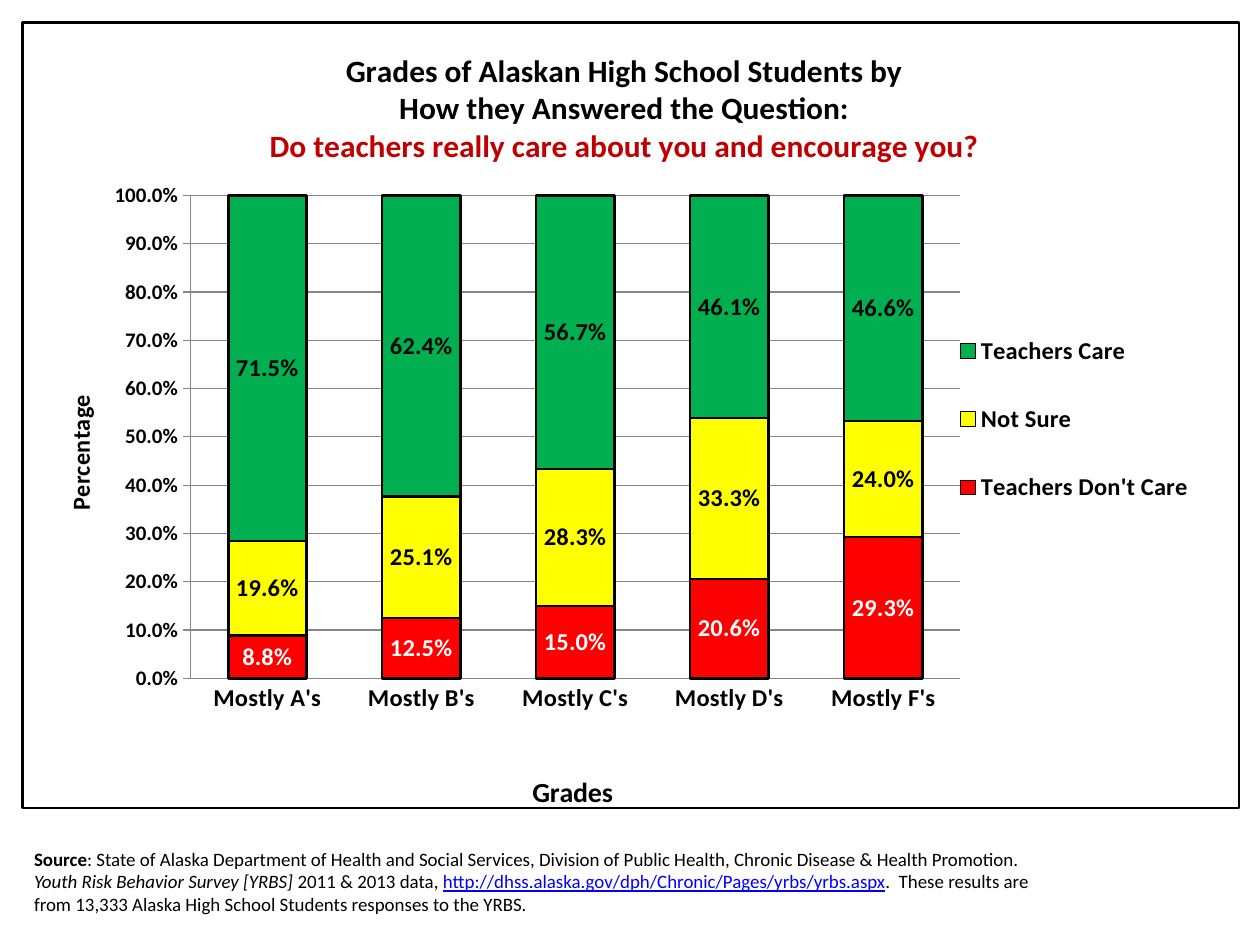
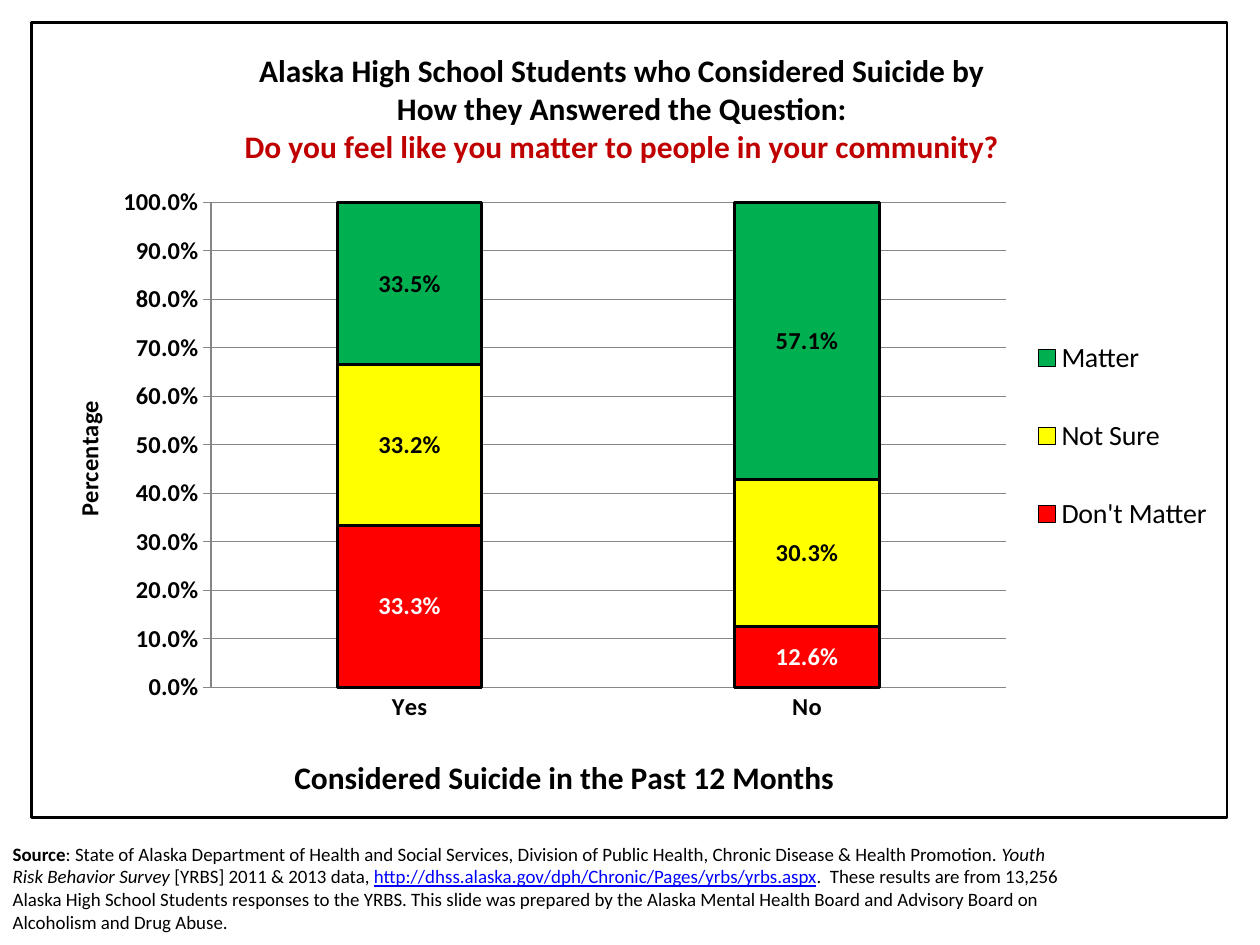
"""Build two slides of stacked survey charts with source notes."""
from dataclasses import dataclass

from lxml import etree
from pptx import Presentation
from pptx import util as u
from pptx.chart.data import CategoryChartData
from pptx.dml.color import RGBColor
from pptx.enum import chart as ch
from pptx.enum import text
from pptx.oxml import parse_xml
from pptx.oxml.ns import nsdecls, qn


@dataclass(frozen=True)
class Theme:
    font: str = "Calibri"
    black: str = "000000"
    white: str = "FFFFFF"
    accent: str = "C00000"
    link: str = "0000FF"
    grid: str = "868686"
    fills: tuple = ("FF0000", "FFFF00", "00B050")
    labels: tuple = ("FFFFFF", "000000", "000000")
    note: float = 10.8
    base: int = 10
    small: int = 12
    body: int = 14
    large: int = 16
    head: int = 18
    percent: str = "0.0%"


T = Theme()
URL = "http://dhss.alaska.gov/dph/Chronic/Pages/yrbs/yrbs.aspx"
AGENCY = (": State of Alaska Department of Health and Social Services, "
          "Division of Public Health, Chronic Disease & Health Promotion. ")
BOLD = {"bold": True}
ITALIC = {"italic": True}
LINK = {"underline": True, "color": T.link}


class Deck:
    """Hold the theme and the current slide, and draw each kind of element."""

    def __init__(self, theme):
        self.t = theme
        self.prs = Presentation()
        self.prs.slide_width, self.prs.slide_height = u.Inches(10), u.Inches(7.5)
        self.s = None

    def add_slide(self):
        self.s = self.prs.slides.add_slide(self.prs.slide_layouts[5])

    def style(self, font, size, color=None, **fmt):
        values = {"name": self.t.font, "size": u.Pt(size), "bold": False, **fmt}
        for key, value in values.items():
            setattr(font, key, value)
        font.color.rgb = RGBColor.from_string(color or self.t.black)

    def line(self, line, color, width):
        line.color.rgb = RGBColor.from_string(color)
        line.width = u.Pt(width)

    def source(self, box, lines):
        sp = self.s.shapes.title
        sp.left, sp.top, sp.width, sp.height = map(u.Inches, box)
        tf = sp.text_frame
        frame = {"word_wrap": True, "auto_size": text.MSO_AUTO_SIZE.NONE,
                 "vertical_anchor": text.MSO_ANCHOR.MIDDLE}
        for key, value in frame.items():
            setattr(tf, key, value)
        p = tf.paragraphs[0]
        p.alignment = text.PP_ALIGN.LEFT
        for i, runs in enumerate(lines):
            if i:
                p.add_line_break()
            for words, fmt in runs:
                r = p.add_run()
                r.text = words
                self.style(r.font, self.t.note, **fmt)

    def place(self, parent, index, spot, inner=False):
        for old in parent.findall(qn("c:layout")):
            parent.remove(old)
        layout = etree.Element(qn("c:layout"))
        manual = etree.SubElement(layout, qn("c:manualLayout"))
        values = {"layoutTarget": "inner"} if inner else {}
        values.update(xMode="edge", yMode="edge")
        values.update(zip("xywh", spot))
        for key, value in values.items():
            etree.SubElement(manual, qn(f"c:{key}")).set("val", str(value))
        parent.insert(index, layout)

    def heading(self, title, lines, size, spot, last=None):
        tf = title.text_frame
        for i, words in enumerate(lines):
            p = tf.add_paragraph() if i else tf.paragraphs[0]
            r = p.add_run()
            r.text = words
            color = last if i == len(lines) - 1 else None
            self.style(r.font, size, color, bold=True)
        element = title._element
        self.place(element, 1, spot)
        return element

    def border(self, chart, width):
        xml = (f'<c:spPr {nsdecls("c", "a")}><a:noFill/><a:ln w="{int(u.Pt(width))}">'
               f'<a:solidFill><a:srgbClr val="{self.t.black}"/></a:solidFill>'
               '</a:ln></c:spPr>')
        chart.element.find(qn("c:chart")).addnext(parse_xml(xml))

    def axes(self, chart, cfg):
        cat, val = chart.category_axis, chart.value_axis
        for axis, size in ((cat, self.t.body), (val, cfg["value_size"])):
            self.style(axis.tick_labels.font, size, bold=True)
            self.line(axis.format.line, self.t.grid, 0.75)
            axis.minor_tick_mark = ch.XL_TICK_MARK.NONE
        cat.major_tick_mark = ch.XL_TICK_MARK.NONE
        limits = {"minimum_scale": 0, "maximum_scale": 1, "major_unit": 0.1,
                  "has_major_gridlines": True,
                  "major_tick_mark": ch.XL_TICK_MARK.OUTSIDE}
        for key, value in limits.items():
            setattr(val, key, value)
        self.line(val.major_gridlines.format.line, self.t.grid, 0.75)
        val.tick_labels.number_format = self.t.percent
        val.tick_labels.number_format_is_linked = False
        self.heading(cat.axis_title, [cfg["x_title"]], cfg["x_size"], cfg["x_spot"])
        title = self.heading(val.axis_title, ["Percentage"], self.t.body, (0.03, 0.47))
        body = title.find(".//" + qn("a:bodyPr"))
        body.set("rot", "-5400000")
        body.set("vert", "horz")

    def series(self, plot, width):
        for ser, fill, color in zip(plot.series, self.t.fills, self.t.labels):
            ser.format.fill.solid()
            ser.format.fill.fore_color.rgb = RGBColor.from_string(fill)
            self.line(ser.format.line, self.t.black, width)
            labels = ser.data_labels
            values = {"show_value": True, "number_format": self.t.percent,
                      "number_format_is_linked": False,
                      "position": ch.XL_LABEL_POSITION.CENTER}
            for key, value in values.items():
                setattr(labels, key, value)
            self.style(labels.font, self.t.body, color, bold=True)

    def chart(self, cfg):
        data = CategoryChartData(number_format=self.t.percent)
        data.categories = cfg["cats"]
        for name, values in cfg["series"].items():
            data.add_series(name, values)
        chart = self.s.shapes.add_chart(
            ch.XL_CHART_TYPE.COLUMN_STACKED, *map(u.Inches, cfg["box"]), data).chart
        self.style(chart.font, self.t.base)
        self.border(chart, cfg["border"])
        chart.has_title = True
        self.heading(chart.chart_title, cfg["title"], self.t.head,
                     cfg["title_spot"], self.t.accent)
        plot = chart.plots[0]
        plot.gap_width, plot.overlap = cfg["gap"], 100
        plot.vary_by_categories = False
        self.axes(chart, cfg)
        self.series(plot, cfg["outline"])
        chart.has_legend = True
        chart.legend.position = ch.XL_LEGEND_POSITION.RIGHT
        chart.legend.include_in_layout = False
        self.style(chart.legend.font, **cfg["legend"])
        root = chart.element.find(qn("c:chart"))
        self.place(root.find(qn("c:legend")), 1, cfg["legend_spot"])
        self.place(root.find(qn("c:plotArea")), 0, cfg["plot_spot"], inner=True)


GRADES = {
    "box": (0.17, 0.17, 9.67, 6.33), "border": 1.25, "outline": 1.5, "gap": 97,
    "title": ["Grades of Alaskan High School Students by",
              "How they Answered the Question:",
              "Do teachers really care about you and encourage you?"],
    "title_spot": (0.2, 0.03), "plot_spot": (0.138, 0.22, 0.633, 0.615),
    "x_title": "Grades", "x_size": T.large, "x_spot": (0.415, 0.95),
    "value_size": T.small,
    "legend": {"size": T.body, "bold": True},
    "legend_spot": (0.765, 0.35, 0.2, 0.31),
    "cats": [f"Mostly {grade}'s" for grade in "ABCDF"],
    "series": {"Teachers Don't Care": (0.088, 0.125, 0.15, 0.206, 0.293),
               "Not Sure": (0.196, 0.251, 0.283, 0.333, 0.24),
               "Teachers Care": (0.715, 0.624, 0.567, 0.461, 0.466)},
}
SUICIDE = {
    "box": (0.24, 0.17, 9.51, 6.33), "border": 1.5, "outline": 1.75, "gap": 175,
    "title": ["Alaska High School Students who Considered Suicide by",
              "How they Answered the Question:",
              "Do you feel like you matter to people in your community?"],
    "title_spot": (0.175, 0.03), "plot_spot": (0.15, 0.226, 0.665, 0.61),
    "x_title": "Considered Suicide in the Past 12 Months",
    "x_size": T.head, "x_spot": (0.215, 0.915),
    "value_size": T.body,
    "legend": {"size": T.large},
    "legend_spot": (0.835, 0.345, 0.155, 0.35),
    "cats": ["Yes", "No"],
    "series": {"Don't Matter": (0.333, 0.126),
               "Not Sure": (0.332, 0.303),
               "Matter": (0.335, 0.571)},
}
GRADES_SOURCE = [
    [("Source", BOLD), (AGENCY, {})],
    [("Youth Risk Behavior Survey [YRBS] ", ITALIC), ("2011 & 2013 data, ", {}),
     (URL, LINK), (".\u00a0 These results are".replace("\u00a0", " "), {})],
    [("from 13,333 Alaska High School Students responses to the YRBS.", {})],
]
SUICIDE_SOURCE = [
    [("Source", BOLD), (AGENCY, {}), ("Youth Risk Behavior Survey", ITALIC),
     (" [YRBS] 2011 & 2013 data, ", {}), (URL, LINK),
     (".  These results are from 13,256 Alaska High School Students responses "
      "to the YRBS. This slide was prepared by the Alaska Mental Health Board "
      "and Advisory Board on Alcoholism and Drug Abuse.", {})],
]


def main():
    deck = Deck(T)
    for cfg, box, lines in ((GRADES, (0.17, 6.68, 9.5, 0.63), GRADES_SOURCE),
                            (SUICIDE, (0, 6.67, 8.5, 0.75), SUICIDE_SOURCE)):
        deck.add_slide()
        deck.source(box, lines)
        deck.chart(cfg)
    deck.prs.save("out.pptx")


if __name__ == "__main__":
    main()
